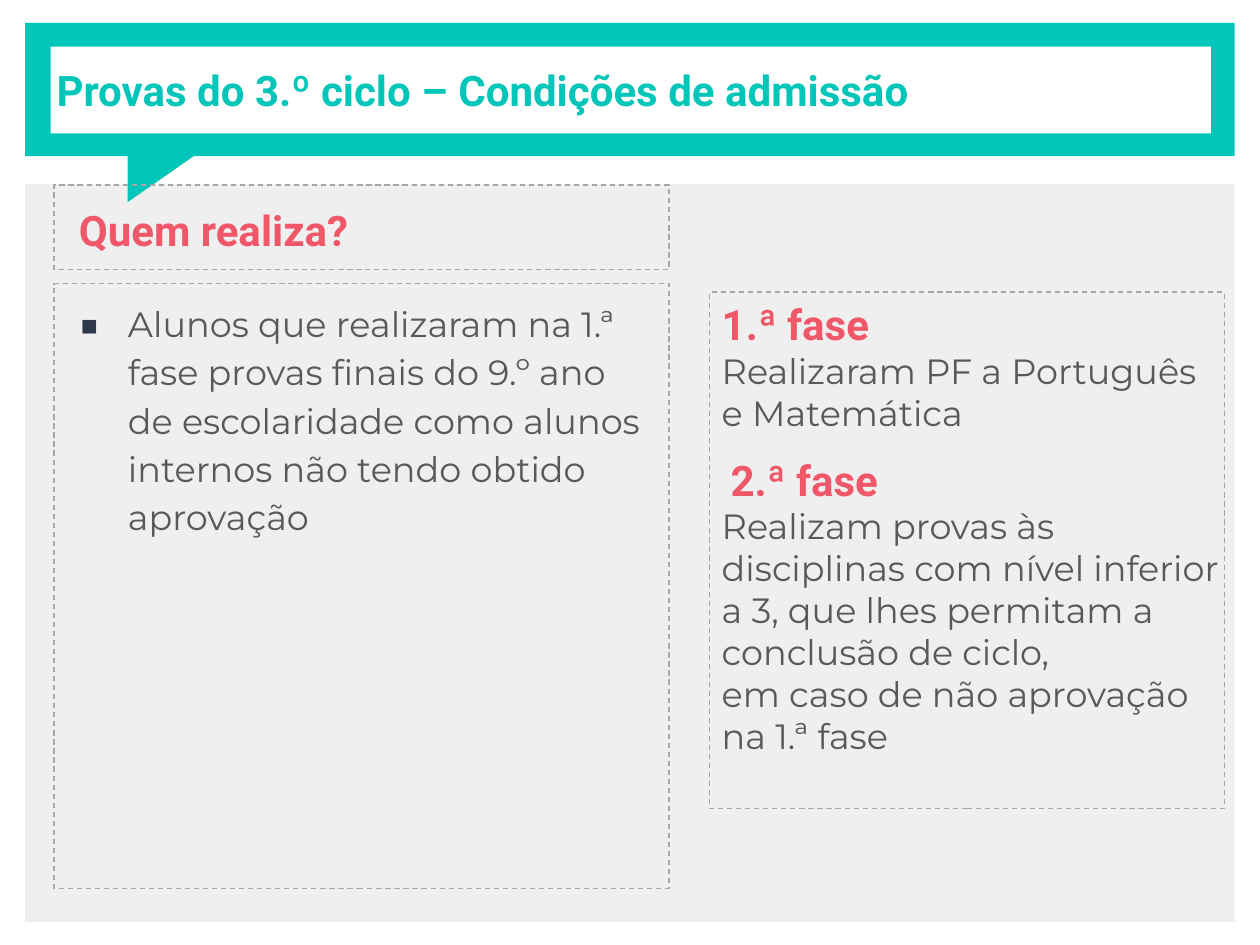
from lxml import etree
from pptx import Presentation
from pptx.dml.color import RGBColor
from pptx.enum.dml import MSO_LINE
from pptx.enum.shapes import MSO_SHAPE as Preset
from pptx.enum.text import MSO_ANCHOR, MSO_AUTO_SIZE, PP_ALIGN
from pptx.oxml.ns import qn
from pptx.util import Cm, Pt

TEAL = RGBColor(0x00, 0xC5, 0xB9)
CORAL = RGBColor(0xF0, 0x57, 0x68)
TEXT_GREY = RGBColor(0x59, 0x59, 0x59)
BORDER_GREY = RGBColor(0xA6, 0xA6, 0xA6)
PANEL_GREY = RGBColor(0xEF, 0xEF, 0xEF)
WHITE = RGBColor(0xFF, 0xFF, 0xFF)
BULLET_COLOUR = "2F3848"

HEADING = ("Roboto", 24, True, CORAL)
TITLE = ("Roboto", 24, True, TEAL)
BODY = ("Montserrat", 20, False, TEXT_GREY)


def prepare_frame(shape, anchor, left, top, right, bottom):
    frame = shape.text_frame
    frame.word_wrap = True
    frame.auto_size = MSO_AUTO_SIZE.NONE
    frame.vertical_anchor = anchor
    frame.margin_left, frame.margin_top = Cm(left), Cm(top)
    frame.margin_right, frame.margin_bottom = Cm(right), Cm(bottom)
    return frame


def write(paragraph, text, style, line_spacing=1, before=0, after=0, left=0, indent=0):
    paragraph.text = text
    paragraph.alignment = PP_ALIGN.LEFT
    paragraph.line_spacing = line_spacing
    paragraph.space_before, paragraph.space_after = Pt(before), Pt(after)
    properties = paragraph._p.get_or_add_pPr()
    properties.set("marL", str(Cm(left)))
    properties.set("indent", str(Cm(indent)))
    for run in paragraph.runs:
        run.font.name, size, run.font.bold, run.font.color.rgb = style
        run.font.size = Pt(size)


presentation = Presentation()
presentation.slide_width, presentation.slide_height = Cm(25.4), Cm(19.05)
slide = presentation.slides.add_slide(presentation.slide_layouts[1])
title, body = slide.shapes.title, slide.placeholders[1]

# Background panel and speech-bubble banner
for preset, colour, rotation, box in [
    (Preset.RECTANGLE, PANEL_GREY, 0, (0.51, 3.71, 24.38, 14.88)),
    (Preset.RECTANGLE, TEAL, 0, (0.51, 0.46, 24.38, 2.69)),
    (Preset.RIGHT_TRIANGLE, TEAL, 90, (2.84, 2.59, 1.22, 1.75)),
    (Preset.RECTANGLE, WHITE, 0, (1.02, 0.94, 23.39, 1.75)),
]:
    shape = slide.shapes.add_shape(preset, *map(Cm, box))
    shape.rotation = rotation
    shape.shadow.inherit = False
    shape.fill.solid()
    shape.fill.fore_color.rgb = colour
    shape.line.fill.background()

# Title, brought in front of the banner
shape_tree = title.element.getparent()
shape_tree.append(title.element)
title.left, title.top, title.width, title.height = map(Cm, (0.89, 0.46, 23.5, 2.69))
frame = prepare_frame(title, MSO_ANCHOR.MIDDLE, 0.25, 0.25, 0.25, 0.25)
write(frame.paragraphs[0], "Provas do 3.º ciclo – Condições de admissão", TITLE)

# Dashed boxes: question, answer list, phases
question = slide.shapes.add_shape(Preset.RECTANGLE, Cm(1.09), Cm(3.73), Cm(12.4), Cm(1.7))
shape_tree.append(body.element)
body.left, body.top, body.width, body.height = map(Cm, (1.09, 5.72, 12.4, 12.19))
phases = slide.shapes.add_shape(Preset.RECTANGLE, Cm(14.3), Cm(5.89), Cm(10.39), Cm(10.41))
for shape in (question, phases):
    shape.shadow.inherit = False
for shape in (question, body, phases):
    shape.fill.background()
    shape.line.color.rgb = BORDER_GREY
    shape.line.width = Pt(0.75)
    shape.line.dash_style = MSO_LINE.DASH

# Question
frame = prepare_frame(question, MSO_ANCHOR.TOP, 0.25, 0.25, 0, 0.25)
write(frame.paragraphs[0], "Quem realiza?", HEADING, line_spacing=1.15, left=0.25)

# Answer with a square bullet
frame = prepare_frame(body, MSO_ANCHOR.TOP, 0.25, 0.25, 0.25, 0.25)
paragraph = frame.paragraphs[0]
write(paragraph, "Alunos que realizaram na 1.ª fase provas finais do 9.º ano de escolaridade "
      "como alunos internos não tendo obtido aprovação", BODY,
      line_spacing=1.15, before=6, left=1.24, indent=-0.99)
properties = paragraph._p.get_or_add_pPr()
bullet_colour = etree.SubElement(properties, qn("a:buClr"))
etree.SubElement(bullet_colour, qn("a:srgbClr"), val=BULLET_COLOUR)
etree.SubElement(properties, qn("a:buFont"), typeface="Montserrat")
etree.SubElement(properties, qn("a:buChar"), char="■")

# Phases
frame = prepare_frame(phases, MSO_ANCHOR.TOP, 0.25, 0.13, 0, 0.13)
for index, (text, style, after, left) in enumerate([
    ("1.ª fase", HEADING, 0, 0),
    ("Realizaram PF a Português e Matemática", BODY, 12, 0),
    ("2.ª fase", HEADING, 0, 0.18),
    ("Realizam provas às disciplinas com nível inferior a 3, "
     "que lhes permitam a conclusão de ciclo,", BODY, 0, 0),
    ("em caso de não aprovação na 1.ª fase", BODY, 0, 0),
]):
    paragraph = frame.add_paragraph() if index else frame.paragraphs[0]
    write(paragraph, text, style, after=after, left=left)

presentation.save("out.pptx")
